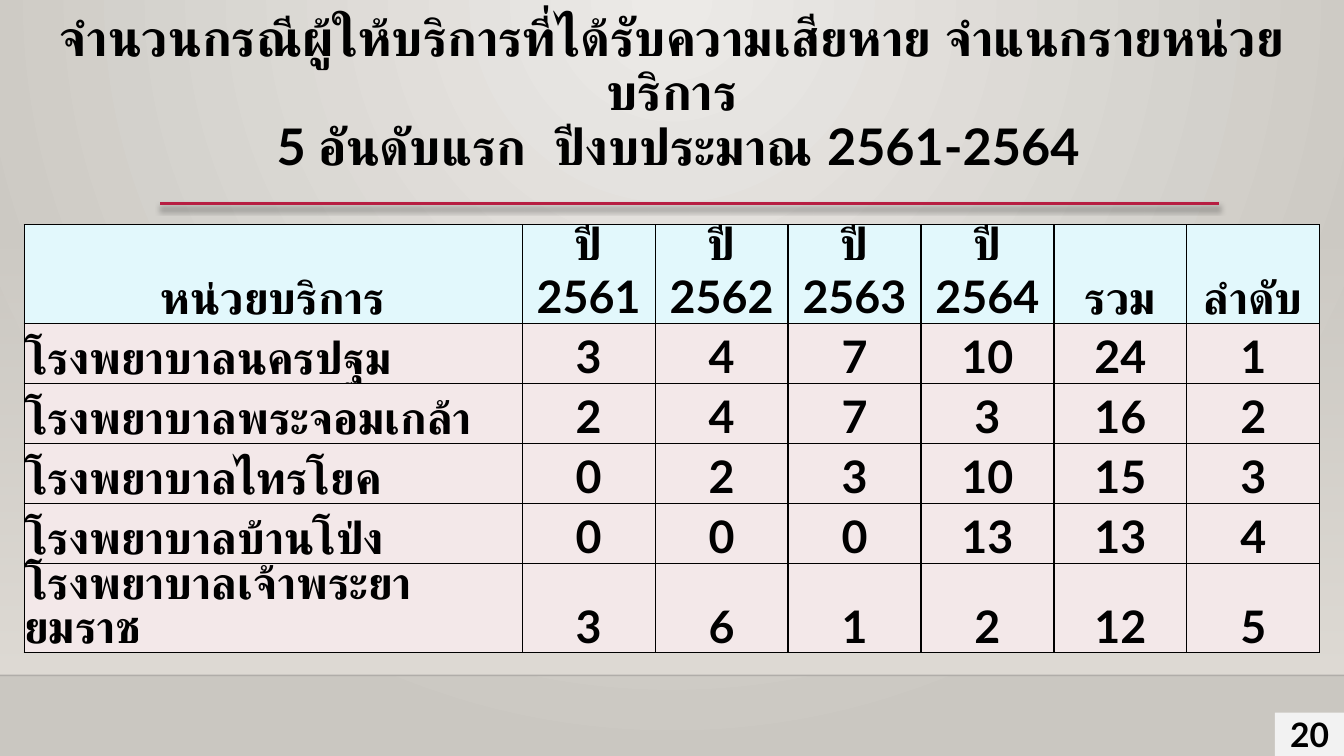
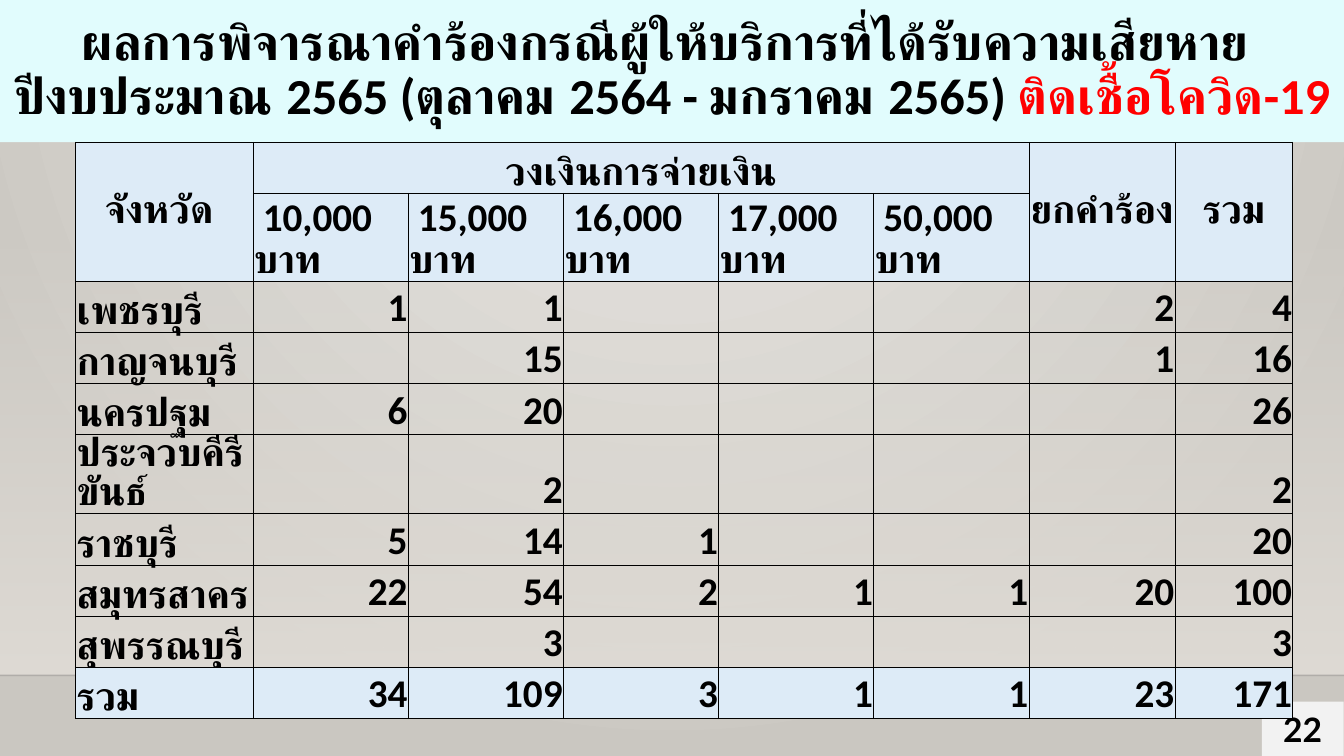
from lxml.etree import SubElement
from pptx import Presentation
from pptx.dml.color import RGBColor
from pptx.enum.lang import MSO_LANGUAGE_ID
from pptx.enum.shapes import MSO_CONNECTOR, MSO_SHAPE
from pptx.enum.text import MSO_ANCHOR, MSO_AUTO_SIZE, PP_ALIGN
from pptx.oxml.ns import qn
from pptx.util import Cm, Pt

BLACK = RGBColor(0, 0, 0)
INK = RGBColor(0, 0, 1)
RED = RGBColor(0xFF, 0, 0)
ROSE = RGBColor(0xB7, 0x1E, 0x42)
GLOW = RGBColor(0xEC, 0xEA, 0xE7)
STONE = RGBColor(0xCA, 0xC7, 0xC1)
SAND = RGBColor(0xDF, 0xDB, 0xD5)
PALE = RGBColor(0xF2, 0xF2, 0xF2)
AQUA = RGBColor(0xE1, 0xFC, 0xFD)
ICE = RGBColor(0xE2, 0xF8, 0xFC)
PINK = RGBColor(0xF3, 0xE8, 0xE9)
SKY = RGBColor(0xDD, 0xEB, 0xF7)

LEFT, MID, RIGHT = PP_ALIGN.LEFT, PP_ALIGN.CENTER, PP_ALIGN.RIGHT
WIDE, HIGH = 33.87, 19.05

UNITS = {
    "title": [
        [("จำนวนกรณีผู้ให้บริการที่ได้รับความเสียหาย จำแนกรายหน่วยบริการ", BLACK)],
        [(" 5 อันดับแรก  ปีงบประมาณ 2561-2564", BLACK)],
    ],
    "face": "Lato", "band": None, "box": (0, 0.84, WIDE, 3.07),
    "page": "20", "tag": (32.13, 17.96, 1.75, 1.09),
    "rows": [
        ["หน่วยบริการ", "ปี 2561", "ปี 2562", "ปี 2563", "ปี 2564", "รวม", "ลำดับ"],
        ["โรงพยาบาลนครปฐม", 3, 4, 7, 10, 24, 1],
        ["โรงพยาบาลพระจอมเกล้า", 2, 4, 7, 3, 16, 2],
        ["โรงพยาบาลไทรโยค", 0, 2, 3, 10, 15, 3],
        ["โรงพยาบาลบ้านโป่ง", 0, 0, 0, 13, 13, 4],
        ["โรงพยาบาลเจ้าพระยายมราช", 3, 6, 1, 2, 12, 5],
    ],
    "at": (0.61, 5.66), "cols": [12.55] + [3.35] * 6, "step": 1.51,
    "size": 32, "rule": 1, "pad": 0, "align": MID,
    "fills": [ICE] + [PINK] * 5, "spans": [],
}

CLAIMS = {
    "title": [
        [("ผลการพิจารณาคำร้องกรณีผู้ให้บริการที่ได้รับความเสียหาย ", BLACK)],
        [("ปีงบประมาณ 2565 (ตุลาคม 2564 - มกราคม 2565) ", BLACK),
         ("ติดเชื้อโควิด-19", RED)],
    ],
    "face": "Calibri", "band": AQUA, "box": (-0.18, 0, 34.24, 3.58),
    "page": "22", "tag": (31.8, 17.68, 2.06, 1.37),
    "rows": [
        ["จังหวัด ", "วงเงินการจ่ายเงิน", "", "", "", "", "ยกคำร้อง", "รวม"],
        ["", " 10,000 บาท", " 15,000 บาท", " 16,000 บาท", " 17,000 บาท",
         " 50,000 บาท", "", ""],
        ["เพชรบุรี", 1, 1, "", "", "", 2, 4],
        ["กาญจนบุรี", "", 15, "", "", "", 1, 16],
        ["นครปฐม", 6, 20, "", "", "", "", 26],
        ["ประจวบคีรีขันธ์", "", 2, "", "", "", "", 2],
        ["ราชบุรี", 5, 14, 1, "", "", "", 20],
        ["สมุทรสาคร", 22, 54, 2, 1, 1, 20, 100],
        ["สุพรรณบุรี", "", 3, "", "", "", "", 3],
        ["รวม", 34, 109, 3, 1, 1, 23, 171],
    ],
    "at": (1.91, 3.58), "cols": [4.47] + [3.91] * 5 + [3.68, 2.97], "step": 1.29,
    "size": 28, "rule": 0.5, "pad": 0.02, "align": RIGHT,
    "fills": [SKY] * 2 + [None] * 7 + [SKY],
    "spans": [(0, 0, 1, 0), (0, 1, 0, 5), (0, 6, 1, 6), (0, 7, 1, 7)],
}


def put(item, **vals):
    for key, val in vals.items():
        setattr(item, key, val)


def place(item, box):
    put(item, **dict(zip(("left", "top", "width", "height"), map(Cm, box))))


def paint(item, color):
    if color is None:
        item.fill.background()
    else:
        item.fill.solid()
        item.fill.fore_color.rgb = color


def blend(fill, *colors):
    fill.gradient()
    for stop, color in zip(fill.gradient_stops, colors):
        stop.color.rgb = color


def fade(node, share):
    SubElement(node, qn("a:alpha"), val=str(share * 1000))


def write(par, text, face, size, color=BLACK):
    run = par.add_run()
    run.text = text
    put(run.font, name=face, size=Pt(size), bold=True,
        language_id=MSO_LANGUAGE_ID.THAI)
    run.font.color.rgb = color


def backdrop(master):
    blend(master.background.fill, GLOW, STONE)
    grad = next(master.element.iter(qn("a:gradFill")))
    grad.remove(grad.find(qn("a:lin")))
    path = SubElement(grad, qn("a:path"), path="circle")
    SubElement(path, qn("a:fillToRect"), l="43000", t="0", r="43000", b="100000")


def rect(slide, box):
    shape = slide.shapes.add_shape(MSO_SHAPE.RECTANGLE, *map(Cm, box))
    shape.shadow.inherit = False
    shape.line.fill.background()
    return shape


def rule(slide, start, end, y, color, width):
    line = slide.shapes.add_connector(
        MSO_CONNECTOR.STRAIGHT, Cm(start), Cm(y), Cm(end), Cm(y))
    line.line.color.rgb = color
    line.line.width = Pt(width)
    return line, SubElement(line._element.spPr, qn("a:effectLst"))


def decor(slide):
    floor = rect(slide, (0, 5.61, WIDE, 11.41))
    blend(floor.fill, SAND, SAND)
    floor.fill.gradient_angle = 270
    fade(next(floor._element.iter(qn("a:srgbClr"))), 0)
    edge, _ = rule(slide, 0, WIDE, 17.02, INK, 1)
    fade(next(edge._element.iter(qn("a:srgbClr"))), 20)
    _, effect = rule(slide, 4.04, 30.73, 5.13, ROSE, 2.5)
    shade = SubElement(effect, qn("a:outerShdw"), blurRad=str(Pt(4)),
                       dist=str(Pt(3)), dir="5400000", rotWithShape="0")
    fade(SubElement(shade, qn("a:srgbClr"), val=str(BLACK)), 35)


def head(slide, data):
    title = slide.shapes.title
    place(title, data["box"])
    paint(title, data["band"])
    frame = title.text_frame
    put(frame, word_wrap=True, auto_size=MSO_AUTO_SIZE.NONE,
        vertical_anchor=MSO_ANCHOR.MIDDLE)
    for i, runs in enumerate(data["title"]):
        par = frame.add_paragraph() if i else frame.paragraphs[0]
        put(par, alignment=MID, line_spacing=0.9)
        for text, color in runs:
            write(par, text, data["face"], 36, color)


def number(slide, data):
    tag = rect(slide, data["tag"])
    paint(tag, PALE)
    tag.text_frame.vertical_anchor = MSO_ANCHOR.MIDDLE
    par = tag.text_frame.paragraphs[0]
    par.alignment = MID
    write(par, data["page"], "Lato", 24)


def border(cell, width):
    props = cell._tc.get_or_add_tcPr()
    for i, side in enumerate(("lnL", "lnR", "lnT", "lnB")):
        line = SubElement(props, qn("a:" + side), w=str(Pt(width)))
        fill = SubElement(line, qn("a:solidFill"))
        SubElement(fill, qn("a:srgbClr"), val=str(BLACK))
        props.insert(i, line)


def grid(slide, data):
    rows, cols = data["rows"], data["cols"]
    size = sum(cols), data["step"] * len(rows)
    table = slide.shapes.add_table(
        len(rows), len(cols), *map(Cm, data["at"] + size)).table
    put(table, first_row=False, horz_banding=False)
    for col, width in zip(table.columns, cols):
        col.width = Cm(width)
    for r, row in enumerate(rows):
        table.rows[r].height = Cm(data["step"])
        for c, value in enumerate(row):
            cell = table.cell(r, c)
            tall = (r, c, r + 1, c) in data["spans"]
            pad = Cm(data["pad"])
            put(cell, margin_left=pad, margin_right=pad, margin_top=pad,
                margin_bottom=0,
                vertical_anchor=MSO_ANCHOR.MIDDLE if tall else MSO_ANCHOR.BOTTOM)
            paint(cell, data["fills"][r])
            border(cell, data["rule"])
            par = cell.text_frame.paragraphs[0]
            number_like = isinstance(value, int)
            par.alignment = MID if r == 0 else data["align"] if number_like else LEFT
            if value != "":
                write(par, str(value), data["face"], data["size"])
    for top, left, low, right in data["spans"]:
        table.cell(top, left).merge(table.cell(low, right))


def main():
    deck = Presentation()
    put(deck, slide_width=Cm(WIDE), slide_height=Cm(HIGH))
    backdrop(deck.slide_master)
    for data in (UNITS, CLAIMS):
        slide = deck.slides.add_slide(deck.slide_layouts[5])
        decor(slide)
        head(slide, data)
        number(slide, data)
        grid(slide, data)
    deck.save("out.pptx")


if __name__ == "__main__":
    main()
